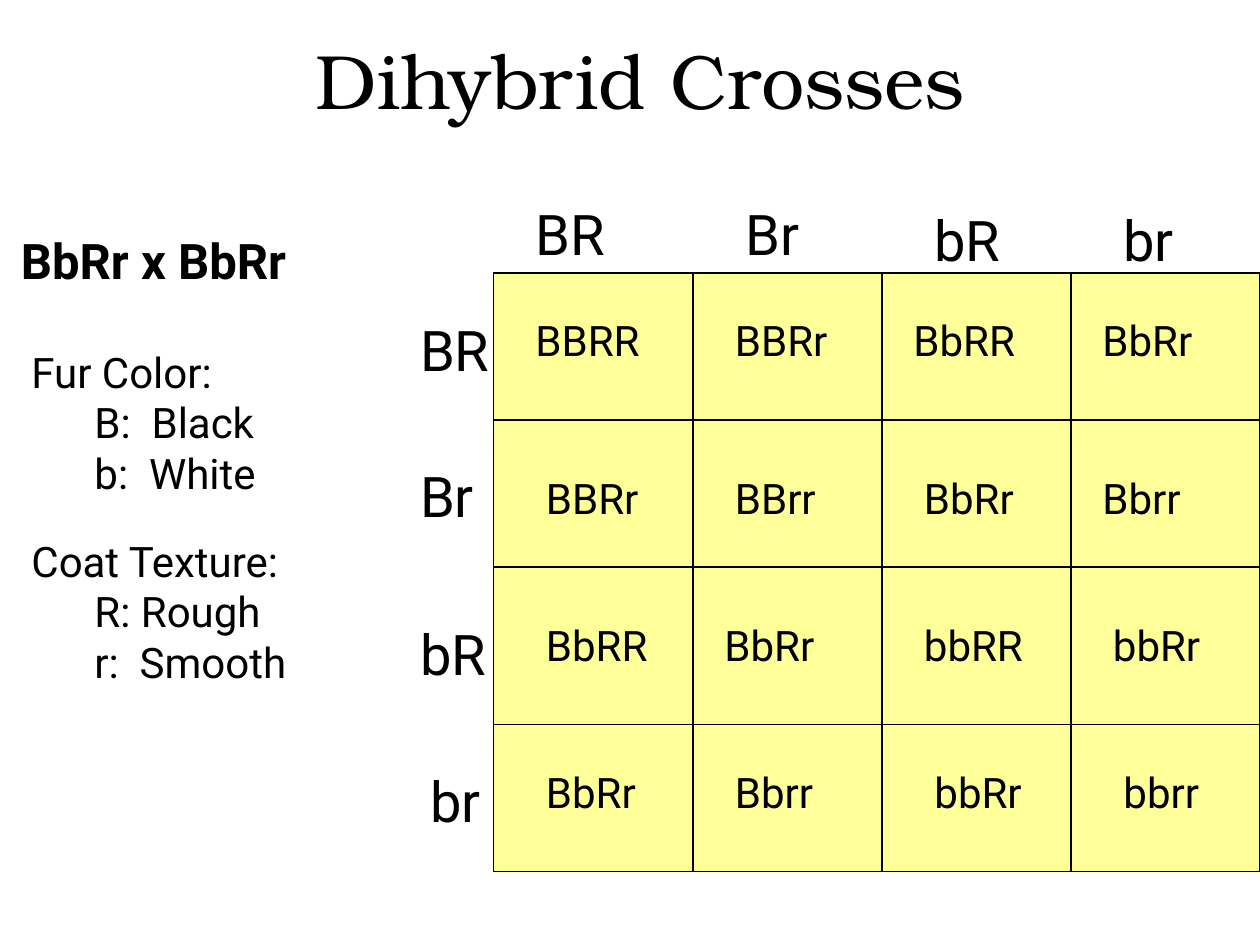
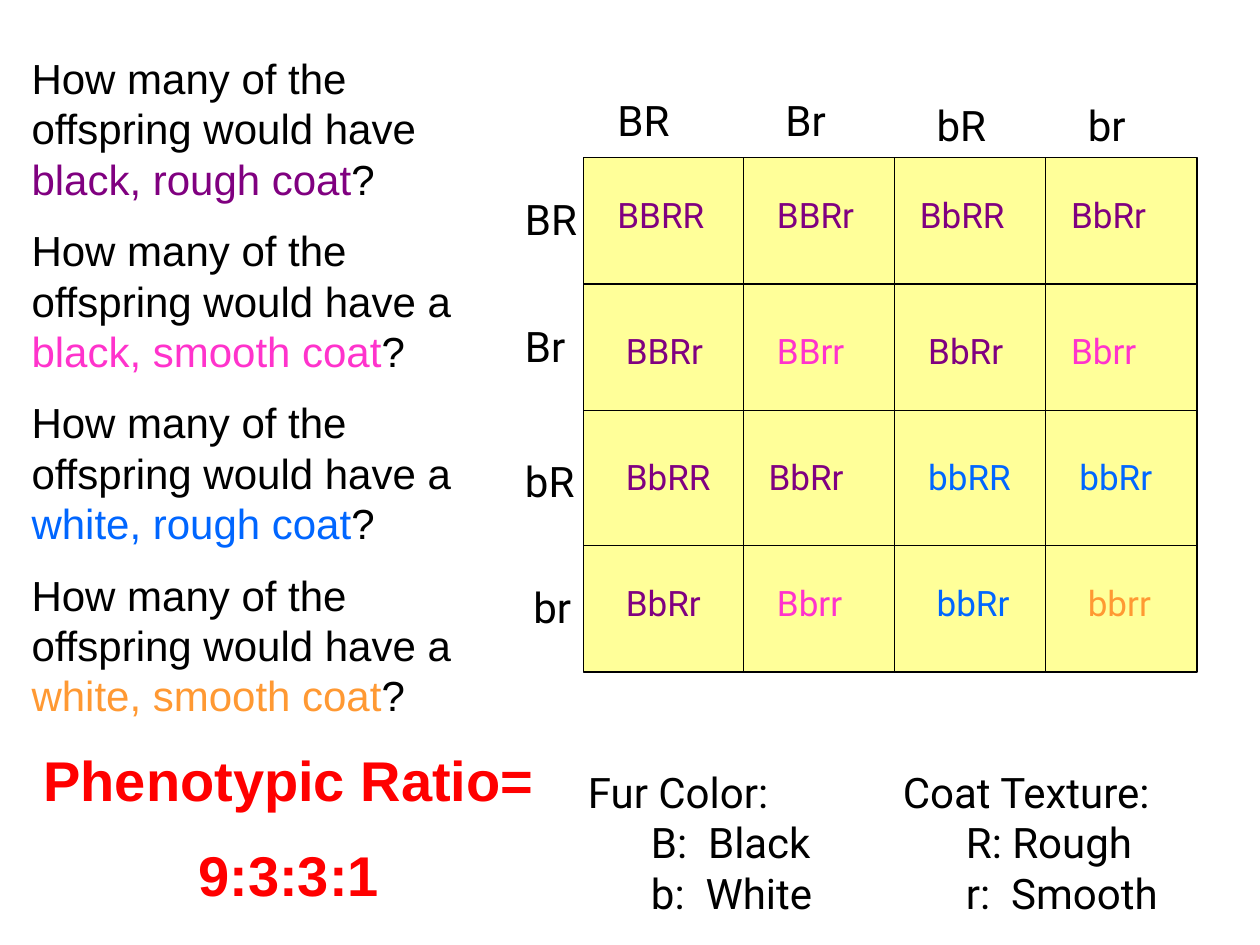
from dataclasses import dataclass
from itertools import product

from pptx import Presentation
from pptx.dml.color import RGBColor
from pptx.enum.shapes import MSO_CONNECTOR as Connector, MSO_SHAPE as Preset
from pptx.enum.text import MSO_ANCHOR as Anchor, PP_ALIGN as Align
from pptx.oxml.ns import qn
from pptx.util import Pt
from lxml.etree import SubElement

BLACK = RGBColor(0x00, 0x00, 0x00)
YELLOW = RGBColor(0xFF, 0xFF, 0x99)
PURPLE = RGBColor(0x80, 0x00, 0x80)
PINK = RGBColor(0xFF, 0x33, 0xCC)
BLUE = RGBColor(0x00, 0x66, 0xFF)
ORANGE = RGBColor(0xFF, 0x99, 0x33)
RED = RGBColor(0xFF, 0x00, 0x00)

GAMETES = ["BR", "Br", "bR", "br"]
COLUMN_EDGES = [282, 396, 504, 612, 720]
ROW_EDGES = [156, 240, 324, 414, 498]
COLUMN_LABELS = [(306, 114), (426, 114), (534, 117.6), (642, 117.6)]
ROW_LABELS = [(240, 180), (240, 264), (240, 354), (246, 438)]
CELL_TOPS = [180, 270, 354, 438]
CELL_LEFTS = [
    [306, 420, 522, 630],
    [312, 420, 528, 630],
    [312, 414, 528, 636],
    [312, 420, 534, 642],
]
FUR = ["Fur Color:", "\tB:  Black ", "\tb:  White"]
COAT = ["Coat Texture:", "\tR: Rough", "\tr:  Smooth"]
QUESTIONS = [
    ("How many of the offspring would have ", "black, rough coat", PURPLE),
    ("How many of the offspring would have a ", "black, smooth coat", PINK),
    ("How many of the offspring would have a ", "white, rough coat", BLUE),
    ("How many of the offspring would have a ", "white, smooth coat", ORANGE),
]


@dataclass
class SquareStyle:
    left: float
    top: float
    x_scale: float
    y_scale: float
    label_size: int
    cell_size: int
    colored: bool

    def x(self, value):
        return self.left + (value - COLUMN_EDGES[0]) * self.x_scale

    def y(self, value):
        return self.top + (value - ROW_EDGES[0]) * self.y_scale


def phenotype_color(genotype):
    if "B" in genotype:
        return PURPLE if "R" in genotype else PINK
    return BLUE if "R" in genotype else ORANGE


class Deck:
    """Shared style and the slide being drawn."""

    heading_font = "TeX Gyre Bonum"
    letter_font = "Roboto"
    question_font = "Arial"
    line_width = 0.75

    def __init__(self):
        self.deck = Presentation()
        self.deck.slide_width, self.deck.slide_height = Pt(720), Pt(540)
        self.page = None

    def new_page(self):
        self.page = self.deck.slides.add_slide(self.deck.slide_layouts[6])

    def text_frame(self, left, top, width, height):
        box = self.page.shapes.add_textbox(Pt(left), Pt(top), Pt(width), Pt(height))
        frame = box.text_frame
        frame.word_wrap = True
        frame.margin_left = frame.margin_right = 0
        frame.margin_top = frame.margin_bottom = 0
        return frame

    def span(self, para, words, size, font, color=BLACK, bold=False):
        run = para.add_run()
        run.text = words
        run.font.size, run.font.name = Pt(size), font
        run.font.color.rgb, run.font.bold = color, bold

    def label(self, left, top, width, words, size, color=BLACK, bold=False):
        frame = self.text_frame(left, top, width, size * 1.2)
        self.span(frame.paragraphs[0], words, size, self.letter_font, color, bold)

    def title(self, words):
        frame = self.text_frame(60, 0, 612, 90)
        frame.vertical_anchor = Anchor.MIDDLE
        frame.paragraphs[0].alignment = Align.CENTER
        self.span(frame.paragraphs[0], words, 44, self.heading_font)

    def legend(self, left, top, lines):
        para = self.text_frame(left, top, 186, 86.4).paragraphs[0]
        for index, line in enumerate(lines):
            if index:
                para.add_line_break()
            self.span(para, line, 24, self.letter_font)

    def paragraphs(self, left, top, width, height, rows, size, gap, align, bold=False):
        frame = self.text_frame(left, top, width, height)
        for index, row in enumerate(rows):
            para = frame.add_paragraph() if index else frame.paragraphs[0]
            para.alignment = align
            para.space_before = Pt(gap if index else 0)
            for words, color in row:
                self.span(para, words, size, self.question_font, color, bold)

    def rule(self, x1, y1, x2, y2):
        line = self.page.shapes.add_connector(
            Connector.STRAIGHT, Pt(x1), Pt(y1), Pt(x2), Pt(y2))
        line.line.color.rgb, line.line.width = BLACK, Pt(self.line_width)
        SubElement(line._element.spPr, qn("a:effectLst"))

    def punnett_square(self, style):
        xs = [style.x(edge) for edge in COLUMN_EDGES]
        ys = [style.y(edge) for edge in ROW_EDGES]
        square = self.page.shapes.add_shape(
            Preset.RECTANGLE, Pt(xs[0]), Pt(ys[0]), Pt(xs[-1] - xs[0]), Pt(ys[-1] - ys[0]))
        square.shadow.inherit = False
        square.fill.solid()
        square.fill.fore_color.rgb = YELLOW
        square.line.color.rgb, square.line.width = BLACK, Pt(self.line_width)
        for y in ys[1:-1]:
            self.rule(xs[0], y, xs[-1], y)
        for x in xs[1:-1]:
            self.rule(x, ys[0], x, ys[-1])
        for places in (COLUMN_LABELS, ROW_LABELS):
            for gamete, (x, y) in zip(GAMETES, places):
                self.label(style.x(x), style.y(y), 48 * style.x_scale, gamete, style.label_size)
        for row, column in product(range(4), repeat=2):
            pairs = zip(GAMETES[row], GAMETES[column])
            genotype = "".join("".join(sorted(pair)) for pair in pairs)
            color = phenotype_color(genotype) if style.colored else BLACK
            self.label(style.x(CELL_LEFTS[row][column]), style.y(CELL_TOPS[row]),
                       66 * style.x_scale, genotype, style.cell_size, color)


def draw_cross(deck):
    deck.new_page()
    deck.title("Dihybrid Crosses")
    deck.legend(18, 198, FUR)
    deck.legend(18, 306, COAT)
    deck.label(12, 132, 174, "BbRr x BbRr", 28, bold=True)
    deck.punnett_square(SquareStyle(282, 156, 1, 1, 32, 24, False))


def draw_ratio(deck):
    deck.new_page()
    deck.punnett_square(SquareStyle(333.6, 90, 0.8, 0.86, 24, 20, True))
    questions = [[(ask, BLACK), (coat, color), ("?", BLACK)] for ask, coat, color in QUESTIONS]
    deck.paragraphs(18, 30, 264, 431, questions, 24, 12, Align.LEFT)
    deck.legend(336, 438, FUR)
    deck.legend(516, 438, COAT)
    ratio = [[("Phenotypic Ratio=", RED)], [("9:3:3:1", RED)]]
    deck.paragraphs(18, 426, 294, 97, ratio, 32, 16, Align.CENTER, bold=True)


def main():
    deck = Deck()
    draw_cross(deck)
    draw_ratio(deck)
    deck.deck.save("out.pptx")


if __name__ == "__main__":
    main()
